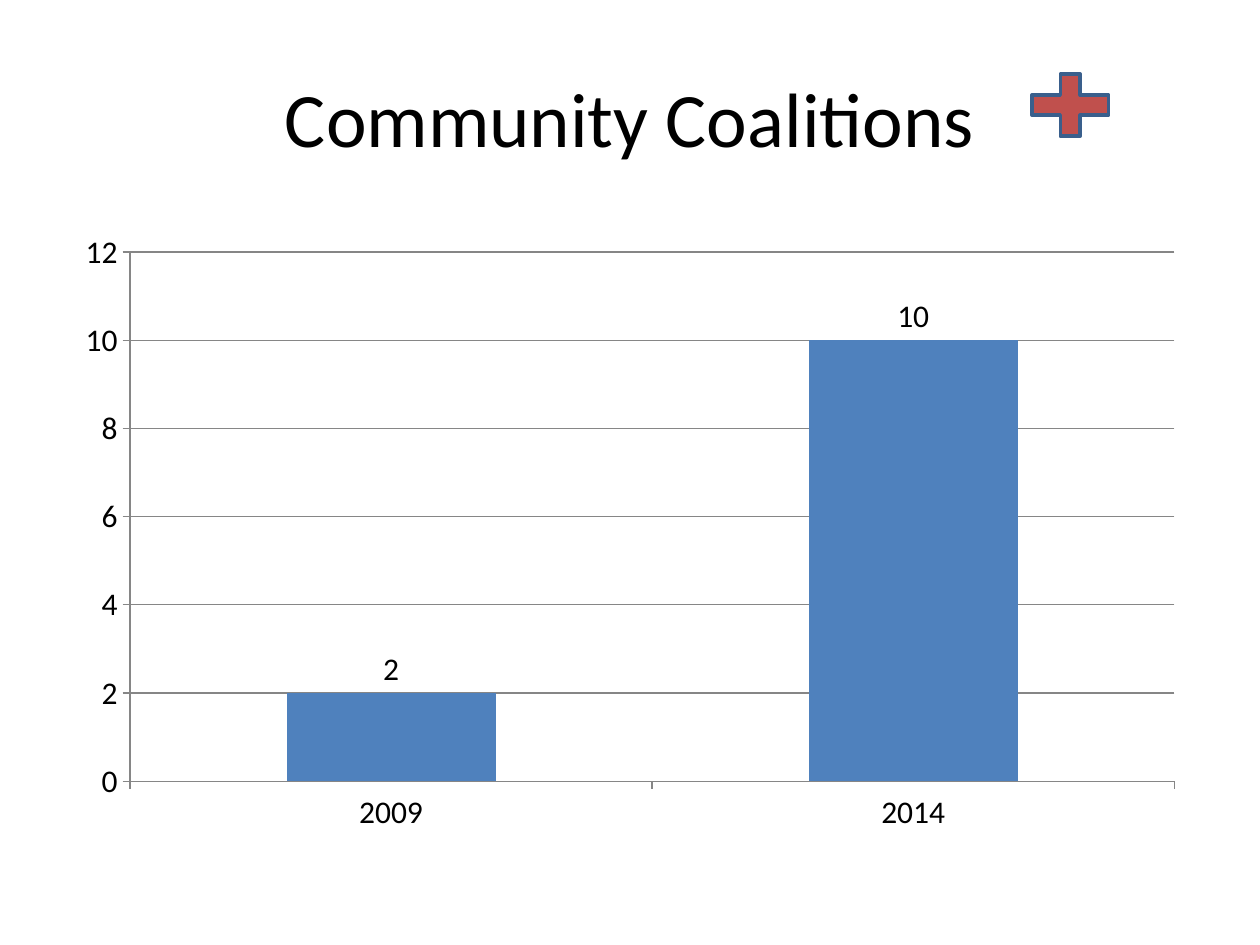
from pptx import Presentation
from pptx.chart.data import CategoryChartData
from pptx.dml.color import RGBColor
from pptx.enum.chart import XL_CHART_TYPE, XL_LABEL_POSITION, XL_TICK_MARK
from pptx.enum.shapes import MSO_SHAPE
from pptx.enum.text import MSO_ANCHOR, PP_ALIGN
from pptx.util import Inches, Pt

COLORS = {"text": "000000", "bar": "4F81BD", "axis": "868686",
          "plus": "C0504D", "plus_edge": "3A5F8C"}
FONT = "Calibri"


def rgb(name):
    return RGBColor.from_string(COLORS[name])


def set_font(font, size):
    font.name = FONT
    font.size = Pt(size)
    font.color.rgb = rgb("text")


prs = Presentation()
prs.slide_width = Inches(10)
prs.slide_height = Inches(7.5)
slide = prs.slides.add_slide(prs.slide_layouts[6])

# Title
title = slide.shapes.add_textbox(Inches(0.5), Inches(0.3), Inches(9), Inches(1.25))
title.text_frame.word_wrap = True
title.text_frame.vertical_anchor = MSO_ANCHOR.MIDDLE
heading = title.text_frame.paragraphs[0]
heading.text = "Community Coalitions"
heading.alignment = PP_ALIGN.CENTER
set_font(heading.font, 44)

# Coalitions per year
coalition_data = CategoryChartData()
coalition_data.categories = ["2009", "2014"]
coalition_data.add_series("Series 1", (2, 10))
coalitions = slide.shapes.add_chart(
    XL_CHART_TYPE.COLUMN_CLUSTERED, Inches(0.5), Inches(1.75),
    Inches(9), Inches(4.95), coalition_data).chart
coalitions.has_title = False
coalitions.has_legend = False
set_font(coalitions.font, 18)

# Bars and value labels
bars = coalitions.plots[0]
bars.gap_width = 150
bars.vary_by_categories = False
bars.series[0].format.fill.solid()
bars.series[0].format.fill.fore_color.rgb = rgb("bar")
bars.has_data_labels = True
bars.data_labels.show_value = True
bars.data_labels.position = XL_LABEL_POSITION.OUTSIDE_END
set_font(bars.data_labels.font, 18)

# Axes and gridlines
years, counts = coalitions.category_axis, coalitions.value_axis
counts.minimum_scale, counts.maximum_scale, counts.major_unit = 0, 12, 2
counts.has_major_gridlines = True
for axis in (years, counts):
    axis.major_tick_mark = XL_TICK_MARK.OUTSIDE
    axis.minor_tick_mark = XL_TICK_MARK.NONE
    set_font(axis.tick_labels.font, 18)
for ruled in (years, counts, counts.major_gridlines):
    ruled.format.line.color.rgb = rgb("axis")
    ruled.format.line.width = Pt(0.75)

# Plus sign beside the title
plus = slide.shapes.add_shape(
    MSO_SHAPE.MATH_PLUS, Inches(8.08), Inches(0.5), Inches(0.83), Inches(0.67))
plus.shadow.inherit = False
plus.fill.solid()
plus.fill.fore_color.rgb = rgb("plus")
plus.line.color.rgb = rgb("plus_edge")
plus.line.width = Pt(2)

prs.save("out.pptx")
